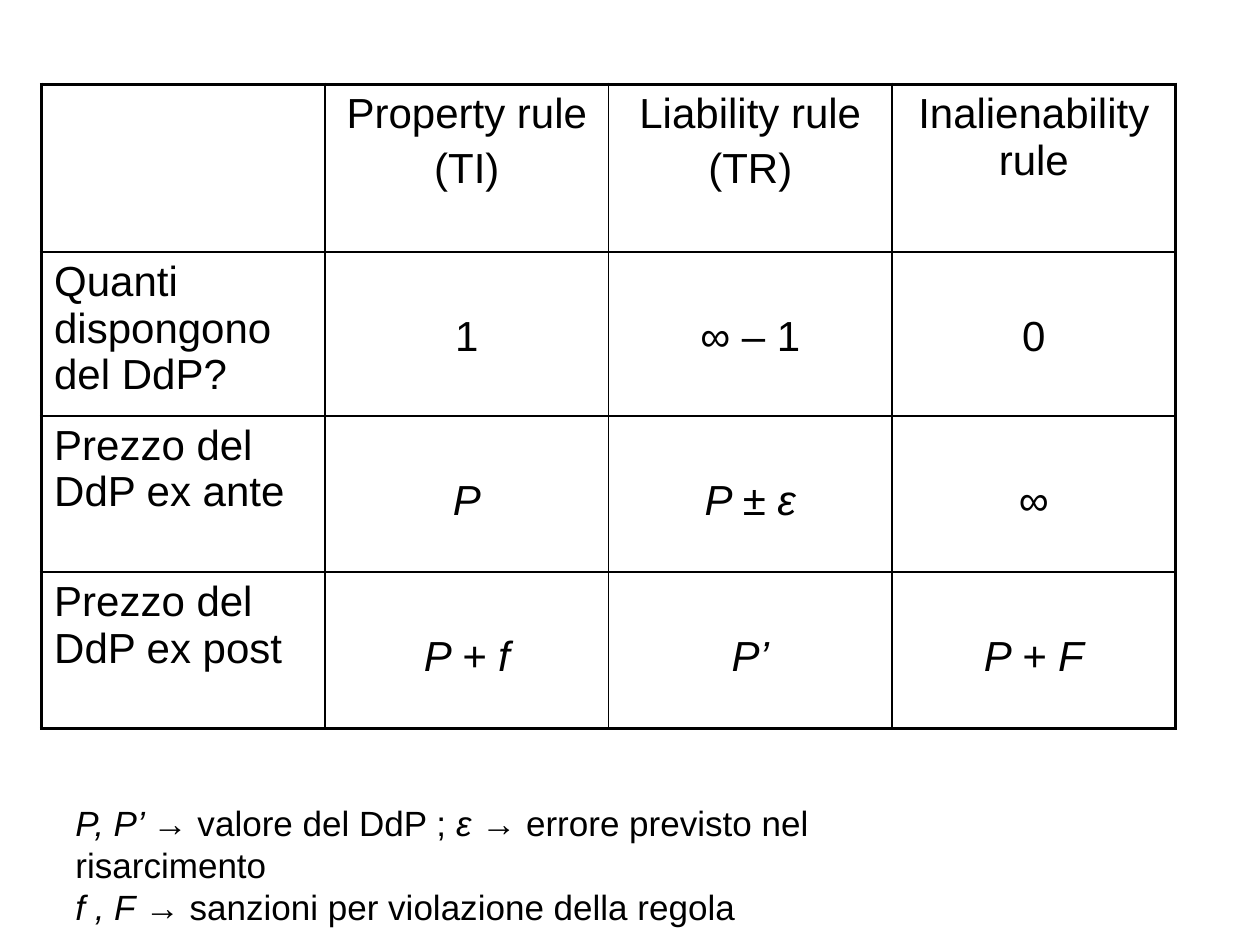
from lxml.etree import SubElement
from pptx import Presentation
from pptx.dml.color import RGBColor
from pptx.enum.text import PP_ALIGN
from pptx.oxml.ns import qn
from pptx.util import Inches, Pt

COLORS = {"ink": "000000", "paper": "FFFFFF"}
FONT = "Arial"
THIN, THICK = Pt(1), Pt(2.25)


def format_span(span, size, italic):
    span.font.name = FONT
    span.font.size = Pt(size)
    span.font.italic = italic
    span.font.color.rgb = RGBColor.from_string(COLORS["ink"])


def add_border(cell, side, width):
    line = SubElement(cell._tc.get_or_add_tcPr(), qn(f"a:{side}"), w=str(width))
    fill = SubElement(line, qn("a:solidFill"))
    SubElement(fill, qn("a:srgbClr"), val=COLORS["ink"])


deck = Presentation()
deck.slide_width, deck.slide_height = Inches(10), Inches(7.5)
page = deck.slides.add_slide(deck.slide_layouts[6])

# Table of rules: each row is a label followed by three values
rows = [
    ["", "Property rule\n(TI)", "Liability rule\n(TR)", "Inalienability rule"],
    ["Quanti dispongono del DdP?", "1", "∞ – 1", "0"],
    ["Prezzo del DdP ex ante", "P", "P ± ε", "∞"],
    ["Prezzo del DdP ex post", "P + f", "P’", "P + F"],
]
row_heights = [1.33, 1.3, 1.24, 1.24]
last_row, last_column = len(rows) - 1, len(rows[0]) - 1

table = page.shapes.add_table(
    len(rows), len(rows[0]), Inches(0.33), Inches(0.67), Inches(9), Inches(sum(row_heights))
).table
table.first_row = table.horz_banding = False
for row, height in zip(table.rows, row_heights):
    row.height = Inches(height)

for r, texts in enumerate(rows):
    for c, text in enumerate(texts):
        cell = table.cell(r, c)
        is_value = r > 0 and c > 0
        # Values sit one line below the top of their row
        cell.margin_top = Inches(0.49 if is_value else 0.05)
        cell.text_frame.text = text
        for para in cell.text_frame.paragraphs:
            para.alignment = PP_ALIGN.CENTER if c > 0 else PP_ALIGN.LEFT
            para.space_before = Pt(4.8)
            for span in para.runs:
                format_span(span, 24, is_value and text.startswith("P"))

        # Thick frame outside, thin rules inside; borders precede the fill
        add_border(cell, "lnL", THICK if c == 0 else THIN)
        add_border(cell, "lnR", THICK if c == last_column else THIN)
        add_border(cell, "lnT", THICK if r == 0 else THIN)
        add_border(cell, "lnB", THICK if r == last_row else THIN)
        cell.fill.solid()
        cell.fill.fore_color.rgb = RGBColor.from_string(COLORS["paper"])

# Legend of symbols: (text, italic) spans for each paragraph
legend = [
    [("P, P’ ", True), ("→ valore del DdP ; ", False), ("ε", True),
     (" → errore previsto nel risarcimento", False)],
    [("f , F ", True), ("→ sanzioni per violazione della regola", False)],
]
box = page.shapes.add_textbox(Inches(0.5), Inches(6.31), Inches(7.58), Inches(0.77))
frame = box.text_frame
frame.word_wrap = True
for index, spans in enumerate(legend):
    para = frame.add_paragraph() if index else frame.paragraphs[0]
    for text, italic in spans:
        span = para.add_run()
        span.text = text
        format_span(span, 20, italic)

deck.save("out.pptx")
